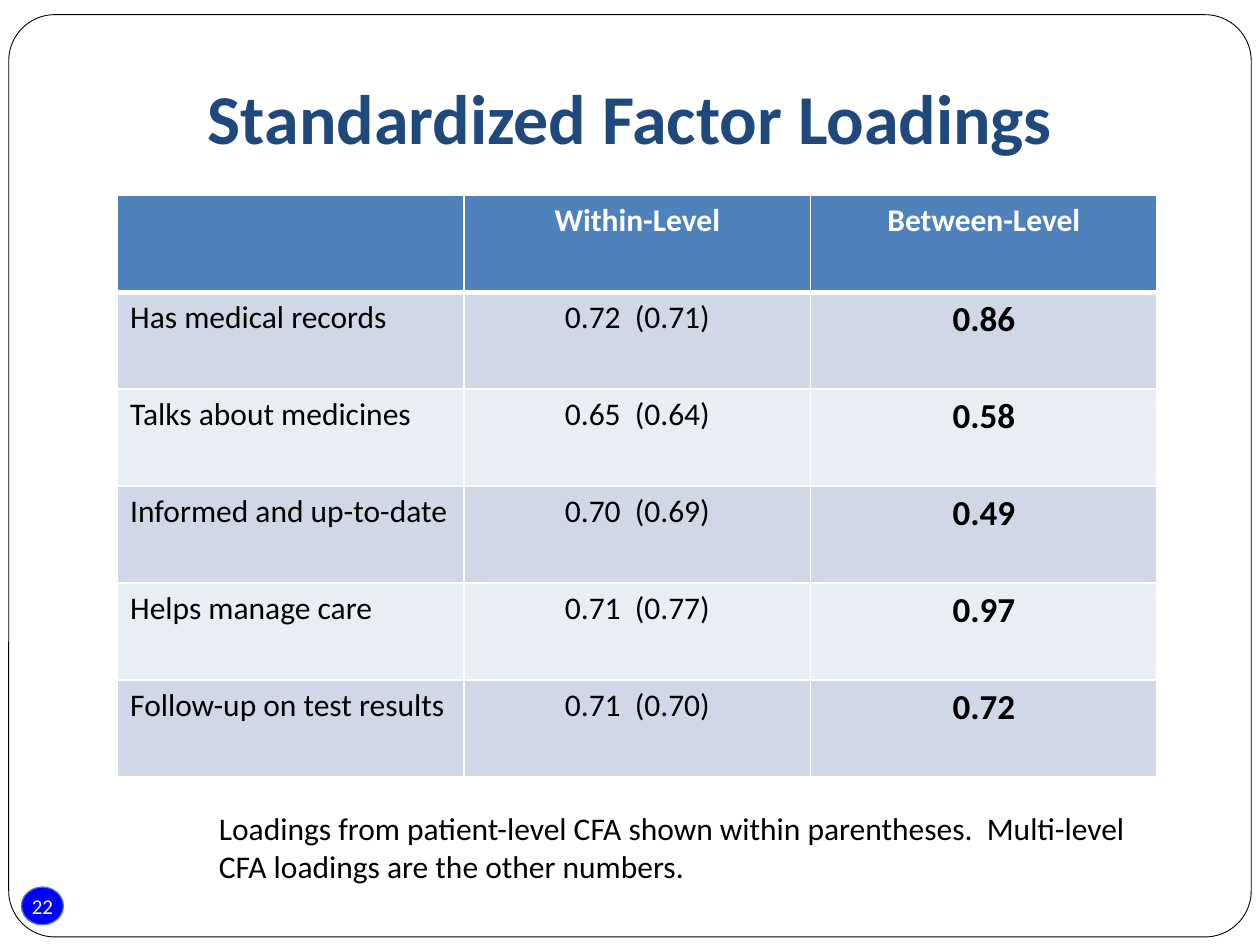
from lxml import etree
from pptx import Presentation
from pptx.dml.color import RGBColor
from pptx.enum import shapes, text
from pptx.oxml import ns
from pptx.util import Pt

WHITE = RGBColor(255, 255, 255)
BLACK = RGBColor(0, 0, 0)
NAVY = RGBColor(0x1F, 0x49, 0x7D)
HEAD = RGBColor(0x4F, 0x81, 0xBD)
BANDS = (RGBColor(0xD0, 0xD8, 0xE8), RGBColor(0xE9, 0xED, 0xF4))
BADGE = RGBColor(0, 0, 255)
EDGE = RGBColor(0x4B, 0x7E, 0xBC)
FONT = "Calibri"
LEFT, MID = text.PP_ALIGN.LEFT, text.PP_ALIGN.CENTER
KIND = shapes.MSO_SHAPE

HEADS = ("", "Within-Level", "Between-Level")
ROWS = (
    ("Has medical records", "0.72  (0.71)", "0.86"),
    ("Talks about medicines", "0.65  (0.64)", "0.58"),
    ("Informed and up-to-date", "0.70  (0.69)", "0.49"),
    ("Helps manage care", "0.71  (0.77)", "0.97"),
    ("Follow-up on test results", "0.71  (0.70)", "0.72"),
)


def write(frame, lines, size=18, color=BLACK, bold=False, align=LEFT):
    """Fill a text frame, one paragraph for each line."""
    for i, line in enumerate(lines.split("\n")):
        para = frame.add_paragraph() if i else frame.paragraphs[0]
        para.alignment = align
        font = para.font
        if line:
            run = para.add_run()
            run.text = line
            font = run.font
        font.name, font.size, font.bold = FONT, Pt(size), bold
        font.color.rgb = color


def add_shape(slide, kind, box, line, width, fill=None):
    shape = slide.shapes.add_shape(kind, *map(Pt, box))
    shape.shadow.inherit = False
    if fill is None:
        shape.fill.background()
    else:
        shape.fill.solid()
        shape.fill.fore_color.rgb = fill
    shape.line.color.rgb = line
    shape.line.width = Pt(width)
    return shape


def add_edges(cell, **widths):
    """Draw white cell borders; keys are the sides L, R, T and B."""
    props = cell._tc.get_or_add_tcPr()
    for side, width in widths.items():
        line = etree.SubElement(props, ns.qn("a:ln" + side), w=str(Pt(width)))
        fill = etree.SubElement(line, ns.qn("a:solidFill"))
        etree.SubElement(fill, ns.qn("a:srgbClr"), val=str(WHITE))


def add_grid(slide, left, top, width, height):
    data = (HEADS,) + ROWS
    table = slide.shapes.add_table(
        len(data), len(HEADS), Pt(left), Pt(top), Pt(width), Pt(height)).table
    for r, row in enumerate(data):
        for c, label in enumerate(row):
            cell = table.cell(r, c)
            head, last = r == 0, c == len(HEADS) - 1
            write(cell.text_frame, label,
                  size=20 if last and not head else 18,
                  color=WHITE if head else BLACK,
                  bold=head or last, align=MID if c else LEFT)
            # A thick rule parts the header from the body
            add_edges(cell, L=1, R=1, T=3 if r == 1 else 1, B=3 if head else 1)
            cell.fill.solid()
            cell.fill.fore_color.rgb = HEAD if head else BANDS[(r - 1) % 2]


def add_title(slide, label):
    title = slide.shapes.title
    title.left, title.top, title.width, title.height = map(Pt, (36, 21.6, 648, 90))
    title.text_frame.vertical_anchor = text.MSO_ANCHOR.MIDDLE
    write(title.text_frame, label, size=40, color=NAVY, bold=True, align=MID)


def add_badge(slide, label):
    badge = add_shape(slide, KIND.OVAL, (12.24, 506.88, 24, 21.6), EDGE, 0.75, BADGE)
    frame = badge.text_frame
    frame.margin_left = frame.margin_right = 0
    frame.margin_top = frame.margin_bottom = 0
    frame.vertical_anchor = text.MSO_ANCHOR.MIDDLE
    frame.word_wrap = False
    write(frame, label, size=12, color=WHITE, align=MID)


def add_note(slide, lines):
    note = slide.shapes.add_textbox(Pt(118), Pt(458.6), Pt(539.3), Pt(51))
    note.text_frame.word_wrap = False
    write(note.text_frame, lines)


def main():
    deck = Presentation()
    deck.slide_width, deck.slide_height = Pt(720), Pt(540)
    slide = deck.slides.add_slide(deck.slide_layouts[5])

    # Page number and frame
    add_badge(slide, "22")
    frame = add_shape(slide, KIND.ROUNDED_RECTANGLE, (5, 8.4, 710, 527), BLACK, 0.5)
    frame.adjustments[0] = 0.05

    # Content
    add_title(slide, "Standardized Factor Loadings")
    add_grid(slide, 67.2, 111.6, 594, 332.4)
    add_note(slide, "Loadings from patient-level CFA shown within parentheses.  Multi-level\n"
                    "CFA loadings are the other numbers.")
    deck.save("out.pptx")


if __name__ == "__main__":
    main()
